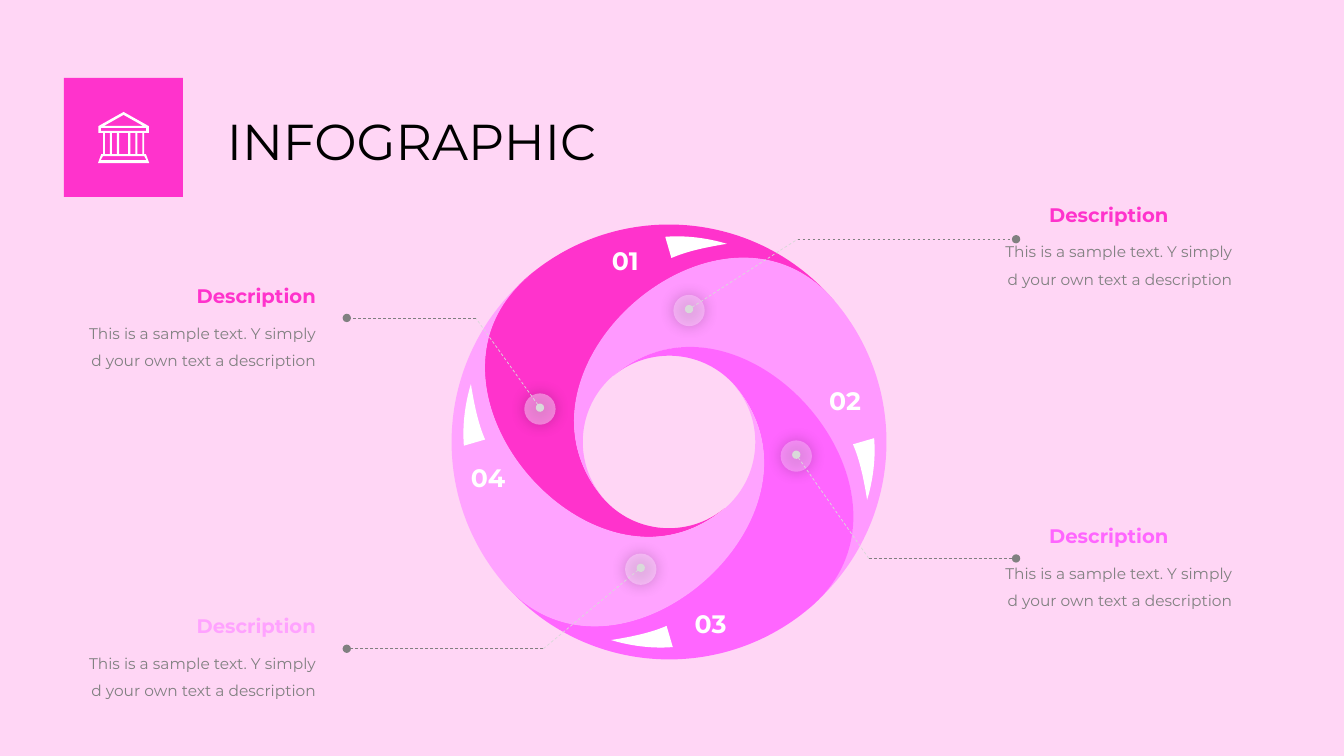
from dataclasses import dataclass

from lxml import etree
from pptx import Presentation
from pptx import util as u
from pptx.dml import color
from pptx.enum import dml, shapes, text
from pptx.oxml import ns

Pt = u.Pt


@dataclass(frozen=True)
class Theme:
    font: str = "Montserrat"
    background: str = "FFD6F5"
    hot: str = "FF33CC"
    vivid: str = "FF66FF"
    soft: str = "FF99FF"
    pale: str = "FFA3FF"
    white: str = "FFFFFF"
    black: str = "000000"
    grey: str = "808080"
    silver: str = "D9D9D9"
    title_size: int = 36
    number_size: int = 18
    heading_size: int = 14
    body_size: int = 11


THEME = Theme()
CENTRE = (477.9, 315.7)
BLADE = [
    (118.3, -100.4), (62.9, -166), (-35.1, -173.9), (-100.6, -118.4),
    (-194.9, -38.5), (-53.1, 125.6), (39.8, 47.2),
    (13.9, 68.8), (-25, 65.9), (-47.3, 40),
    (-125.1, -52.9), (38.4, -194.8), (118.3, -100.4),
]
ARROW = [
    (41.3, -141.5), (31.9, -144.4), (15.3, -148), (-2.7, -146.5),
    (1.7, -131.4), (1.7, -131.4), (1.7, -131.4),
    (11.7, -135.7), (23.3, -138.6), (41.3, -141.5),
]
BLADE_COLOURS = [THEME.hot, THEME.soft, THEME.vivid, THEME.pale]
NUMBERS = [("01", 446.7, 186), ("02", 603.7, 285.8),
           ("03", 507.6, 445.3), ("04", 348.6, 341.3)]
CALLOUTS = [
    (141.1, True, THEME.hot, "FFD6FF", (492.2, 221.8), (569.7, 170.9)),
    (370.5, True, THEME.vivid, "FFC2FF", (568.8, 325.8), (620.6, 398.9)),
    (434.9, False, THEME.pale, "FFE0FF", (457.7, 406.6), (388.1, 463.4)),
    (199.1, False, THEME.hot, "FFE0FF", (385.7, 292.2), (339.8, 227.1)),
]
BODY = "This is a sample text. Y simply d your own text a description"


def rgb(value):
    return color.RGBColor.from_string(value)


def paint(shape, fill):
    shape.fill.solid()
    shape.fill.fore_color.rgb = rgb(fill)
    shape.line.fill.background()
    shape.shadow.inherit = False


def add_outline(parent, contours, fill):
    contours = [[(Pt(x), Pt(y)) for x, y in contour] for contour in contours]
    builder = parent.shapes.build_freeform(*contours[0][0], scale=1.0)
    builder.add_line_segments(contours[0][1:], close=True)
    for contour in contours[1:]:
        builder.move_to(*contour[0])
        builder.add_line_segments(contour[1:], close=True)
    outline = builder.convert_to_shape()
    paint(outline, fill)
    return outline


def bend(outline):
    steps = list(outline._element.iter(ns.qn("a:lnTo")))
    for first in range(0, len(steps), 3):
        curve = etree.Element(ns.qn("a:cubicBezTo"))
        steps[first].addprevious(curve)
        for step in steps[first:first + 3]:
            curve.append(step[0])
            step.getparent().remove(step)


def add_ring_part(ring, points, quarter_turns, fill):
    for _ in range(quarter_turns):
        points = [(-y, x) for x, y in points]
    bend(add_outline(ring, [[(CENTRE[0] + x, CENTRE[1] + y)
                             for x, y in points]], fill))


def format_text(frame, words, size, colour, bold=False,
                align=text.PP_ALIGN.LEFT):
    frame.word_wrap = True
    paragraph = frame.paragraphs[0]
    paragraph.text = words
    paragraph.alignment = align
    font = paragraph.font
    font.name, font.size, font.bold = THEME.font, Pt(size), bold
    font.color.rgb = rgb(colour)
    return paragraph


def add_text(parent, box, *style, **options):
    frame = parent.shapes.add_textbox(*map(Pt, box)).text_frame
    return frame, format_text(frame, *style, **options)


def add_title(slide):
    title = slide.shapes.title
    title.left, title.top, title.width, title.height = map(
        Pt, (154.8, 74.4, 666.7, 51.1))
    format_text(title.text_frame, "INFOGRAPHIC", THEME.title_size, THEME.black)
    title.text_frame.vertical_anchor = text.MSO_ANCHOR.BOTTOM
    title.text_frame.auto_size = text.MSO_AUTO_SIZE.SHAPE_TO_FIT_TEXT


def add_museum_icon(slide):
    tile = slide.shapes.add_shape(shapes.MSO_SHAPE.RECTANGLE,
                                  *map(Pt, (45.7, 55.7, 85, 85)))
    paint(tile, THEME.hot)
    halves = [
        [(0, 80), (18.1, 90.2), (18.1, 95), (14.6, 95), (14.6, 110.2),
         (16, 110.2), (18.3, 116.5)],
        [(0, 82.1), (14, 90)],
        [(16.2, 91.4), (16.2, 93.6)],
        [(14.8, 111.6), (16.4, 114.5)],
        [(3.2, 95), (3.2, 110.2)],
    ]
    contours = [half + [(-x, y) for x, y in reversed(half) if x]
                for half in halves]
    for left in (-13.4, -8.4, 4.8, 9.8):
        right = left + 3.6
        contours.append([(left, 95), (right, 95), (right, 110.2), (left, 110.2)])
    add_outline(slide, [[(88.3 + x, y) for x, y in contour]
                        for contour in contours], THEME.white)


def add_number(ring, label, x, y):
    frame, paragraph = add_text(
        ring, (x - 35, y - 10.8, 70, 21.6), label, THEME.number_size,
        THEME.white, bold=True, align=text.PP_ALIGN.CENTER)
    frame.margin_left = frame.margin_right = frame.margin_top = frame.margin_bottom = 0
    frame.vertical_anchor = text.MSO_ANCHOR.MIDDLE
    frame.auto_size = text.MSO_AUTO_SIZE.SHAPE_TO_FIT_TEXT
    paragraph.space_after = Pt(12)


def add_ring(slide):
    ring = slide.shapes.add_group_shape()
    for turns, colour in enumerate(BLADE_COLOURS):
        add_ring_part(ring, BLADE, turns, colour)
    for turns, number in enumerate(NUMBERS):
        add_ring_part(ring, ARROW, turns, THEME.white)
        add_number(ring, *number)


def add_pin(slide, x, y, fill):
    pin = slide.shapes.add_shape(shapes.MSO_SHAPE.OVAL,
                                 *map(Pt, (x - 11.2, y - 11.2, 22.4, 22.4)))
    paint(pin, fill)
    properties = pin._element.spPr
    tint = properties.find(".//" + ns.qn("a:srgbClr"))
    etree.SubElement(tint, ns.qn("a:alpha"), val="46000")
    glow = etree.SubElement(properties.find(ns.qn("a:effectLst")),
                            ns.qn("a:outerShdw"), blurRad=str(Pt(11)),
                            dist="0", dir="5400000", algn="ctr", rotWithShape="0")
    shade = etree.SubElement(glow, ns.qn("a:srgbClr"), val=THEME.black)
    etree.SubElement(shade, ns.qn("a:alpha"), val="43000")


def add_leader(slide, start, end, colour, dot_end):
    leader = slide.shapes.add_connector(shapes.MSO_CONNECTOR.STRAIGHT,
                                        *map(Pt, start + end))
    leader.line.width = Pt(0.5)
    leader.line.color.rgb = rgb(colour)
    leader.line.dash_style = dml.MSO_LINE.DASH
    properties = leader._element.spPr
    etree.SubElement(properties.find(ns.qn("a:ln")), ns.qn(dot_end), type="oval")
    etree.SubElement(properties, ns.qn("a:effectLst"))


def add_callout(slide, top, on_right, colour, pin_fill, pin, elbow):
    add_pin(slide, *pin, pin_fill)
    add_leader(slide, (pin[0], pin[1] - 1), elbow, THEME.silver, "a:headEnd")
    add_leader(slide, elbow, (725.8 if on_right else 247.7, elbow[1]),
               THEME.grey, "a:tailEnd")
    _, body = add_text(slide, (708.8 if on_right else 54.3, top + 22, 178.6, 69.1),
                       BODY, THEME.body_size, THEME.grey,
                       align=text.PP_ALIGN.RIGHT)
    body.line_spacing = 1.5
    add_text(slide, (742.3 if on_right else 104.6, top, 128.2, 39.6),
             "Description", THEME.heading_size, colour, bold=True,
             align=text.PP_ALIGN.LEFT if on_right else text.PP_ALIGN.RIGHT)


def main():
    deck = Presentation()
    deck.slide_width, deck.slide_height = Pt(960), Pt(540)
    slide = deck.slides.add_slide(deck.slide_layouts[5])
    slide.background.fill.solid()
    slide.background.fill.fore_color.rgb = rgb(THEME.background)
    add_title(slide)
    add_museum_icon(slide)
    add_ring(slide)
    for callout in CALLOUTS:
        add_callout(slide, *callout)
    deck.save("out.pptx")


if __name__ == "__main__":
    main()
